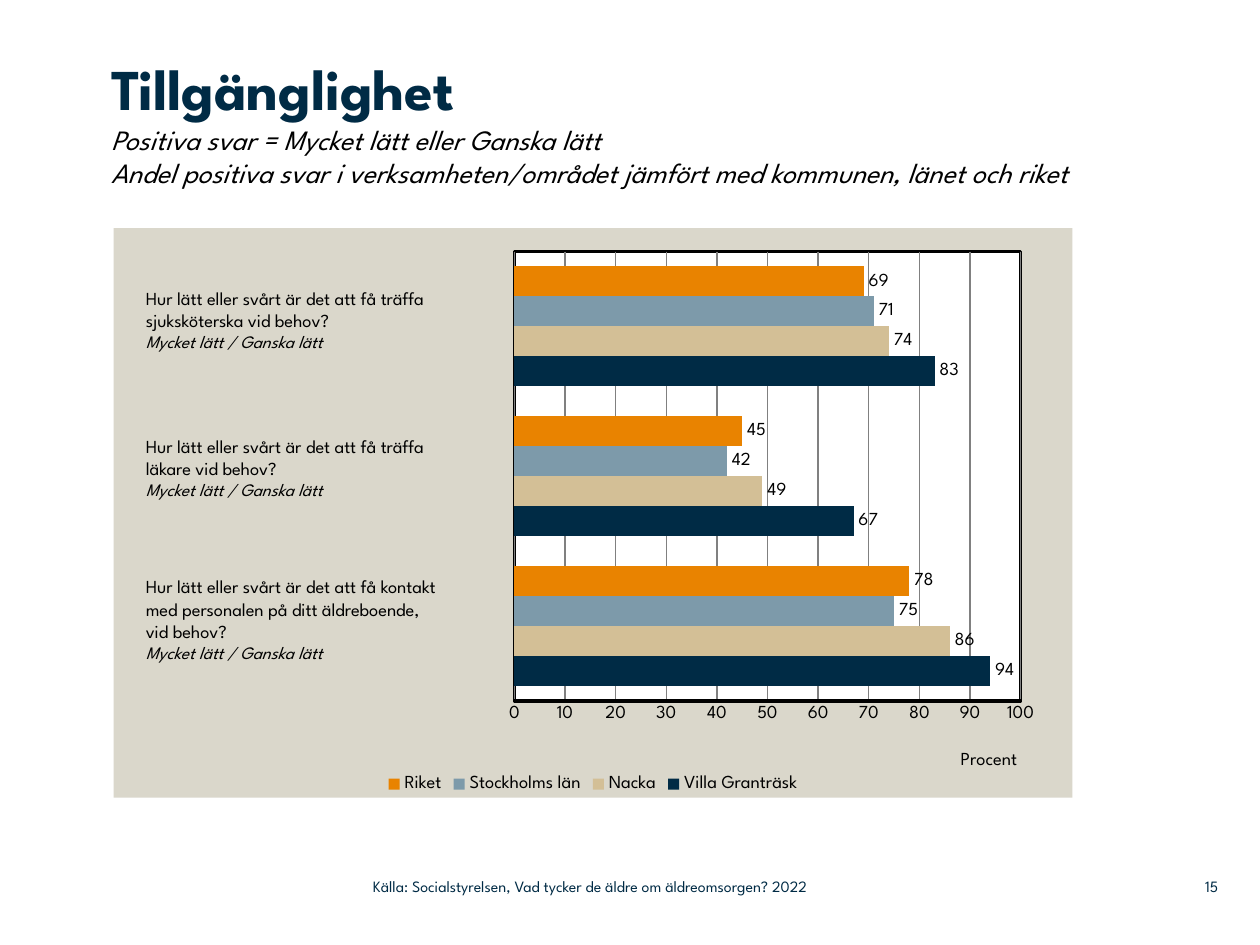
"""Build the accessibility slide with a bar chart of survey answers."""
import pptx
import pptx.chart.data
import pptx.dml.color
import pptx.enum.chart
import pptx.enum.text
import pptx.oxml
import pptx.oxml.ns
import pptx.util

Cm = pptx.util.Cm
Pt = pptx.util.Pt
FONT = "League Spartan"
NAVY = "002B45"
BLACK = "000000"


def colour(code):
    return pptx.dml.color.RGBColor.from_string(code)


def write(box, text, size=10.5, ink=BLACK, bold=False, italic=False, align="LEFT"):
    frame = box.text_frame
    para = frame.add_paragraph() if frame.text else frame.paragraphs[0]
    para.alignment = pptx.enum.text.PP_ALIGN[align]
    span = para.add_run()
    span.text = text
    span.font.name = FONT
    span.font.size = Pt(size)
    span.font.bold = bold
    span.font.italic = italic
    span.font.color.rgb = colour(ink)


deck = pptx.Presentation()
deck.slide_width = Cm(25.4)
deck.slide_height = Cm(19.05)
page = deck.slides.add_slide(deck.slide_layouts[6])

title = page.shapes.add_textbox(Cm(2.24), Cm(1.07), Cm(19.74), Cm(3.53))
write(title, "Tillgänglighet", size=33, ink=NAVY, bold=True)
for line in (
    "Positiva svar = Mycket lätt eller Ganska lätt",
    "Andel positiva svar i verksamheten/området jämfört med kommunen, länet och riket",
):
    write(title, line, size=16, italic=True)

series_list = [
    ("Villa Granträsk", NAVY, (94, 67, 83)),
    ("Nacka", "D3BF96", (86, 49, 74)),
    ("Stockholms län", "7D9AAA", (75, 42, 71)),
    ("Riket", "E98300", (78, 45, 69)),
]
data = pptx.chart.data.CategoryChartData()
data.categories = ["1", "2", "3"]
for name, fill, values in series_list:
    data.add_series(name, values)
chart = page.shapes.add_chart(
    pptx.enum.chart.XL_CHART_TYPE.BAR_CLUSTERED,
    Cm(2.29), Cm(4.6), Cm(19.33), Cm(11.48), data,
).chart
chart.has_title = False
chart.font.name = FONT
chart.font.size = Pt(10.5)
chart.font.color.rgb = colour(BLACK)
chart.has_legend = True
chart.legend.position = pptx.enum.chart.XL_LEGEND_POSITION.BOTTOM
chart.legend.include_in_layout = False

plot = chart.plots[0]
plot.gap_width = 100
plot.overlap = 0
plot.vary_by_categories = False
for series, (name, fill, values) in zip(plot.series, series_list):
    series.format.fill.solid()
    series.format.fill.fore_color.rgb = colour(fill)
    series.data_labels.show_value = True
    series.data_labels.position = pptx.enum.chart.XL_LABEL_POSITION.OUTSIDE_END

chart.category_axis.visible = False
axis = chart.value_axis
axis.minimum_scale = 0
axis.maximum_scale = 100
axis.major_unit = 10
axis.major_tick_mark = pptx.enum.chart.XL_TICK_MARK.NONE
axis.format.line.color.rgb = colour(BLACK)
axis.format.line.width = Pt(2)
axis.major_gridlines.format.line.color.rgb = colour("808080")
axis.major_gridlines.format.line.width = Pt(0.75)
axis.axis_title.text_frame.text = "Procent"
caption = axis.axis_title.text_frame.paragraphs[0].runs[0].font
caption.name = FONT
caption.size = Pt(10.5)
caption.bold = False
caption.color.rgb = colour(BLACK)

space = chart._chartSpace
names = pptx.oxml.ns.nsdecls("c", "a")
area = space.xpath("c:chart/c:plotArea")[0]
heading = area.xpath("c:valAx/c:title")[0]
for parent, place, target, sizes in (
    (area, 0, "inner", {"x": 0.418, "y": 0.041, "w": 0.528, "h": 0.789}),
    (heading, 1, "", {"x": 0.88, "y": 0.91}),
):
    for old in parent.xpath("c:layout"):
        parent.remove(old)
    modes = "".join(f'<c:{key}Mode val="edge"/>' for key in "xy")
    parts = "".join(f'<c:{key} val="{value}"/>' for key, value in sizes.items())
    kind = f'<c:layoutTarget val="{target}"/>' if target else ""
    parent.insert(place, pptx.oxml.parse_xml(
        f"<c:layout {names}><c:manualLayout>{kind}{modes}{parts}</c:manualLayout></c:layout>"
    ))

solid = '<a:solidFill><a:srgbClr val="{}"/></a:solidFill>'
border = f'<a:ln w="{Pt(2)}">{solid.format(BLACK)}</a:ln>'
properties = "<c:spPr {}>{}{}</c:spPr>"
area.append(pptx.oxml.parse_xml(properties.format(names, solid.format("FFFFFF"), border)))
space.xpath("c:chart")[0].addnext(pptx.oxml.parse_xml(
    properties.format(names, solid.format("DAD7CB"), "<a:ln><a:noFill/></a:ln>")
))

questions = [
    (5.66, 7.59, 2.06, ["Hur lätt eller svårt är det att få träffa sjuksköterska vid behov?"]),
    (8.64, 7.44, 2.06, ["Hur lätt eller svårt är det att få träffa", "läkare vid behov?"]),
    (11.48, 7.65, 2.49, ["Hur lätt eller svårt är det att få kontakt",
                         "med personalen på ditt äldreboende,", "vid behov?"]),
]
for top, width, height, lines in questions:
    question = page.shapes.add_textbox(Cm(2.69), Cm(top), Cm(width), Cm(height))
    question.text_frame.word_wrap = True
    for line in lines:
        write(question, line)
    write(question, "Mycket lätt / Ganska lätt", size=10, italic=True)

source = page.shapes.add_textbox(Cm(7.52), Cm(17.5), Cm(11.25), Cm(0.74))
write(source, "Källa: Socialstyrelsen, Vad tycker de äldre om äldreomsorgen? 2022", size=9, ink=NAVY)
number = page.shapes.add_textbox(Cm(23.37), Cm(17.5), Cm(1.19), Cm(0.74))
write(number, "15", size=9, ink=NAVY, align="RIGHT")

for box in (title, source, number):
    frame = box.text_frame
    frame.word_wrap = True
    frame.margin_left = frame.margin_right = frame.margin_top = frame.margin_bottom = 0
for box in (source, number):
    box.text_frame.vertical_anchor = pptx.enum.text.MSO_ANCHOR.MIDDLE

deck.save("out.pptx")
